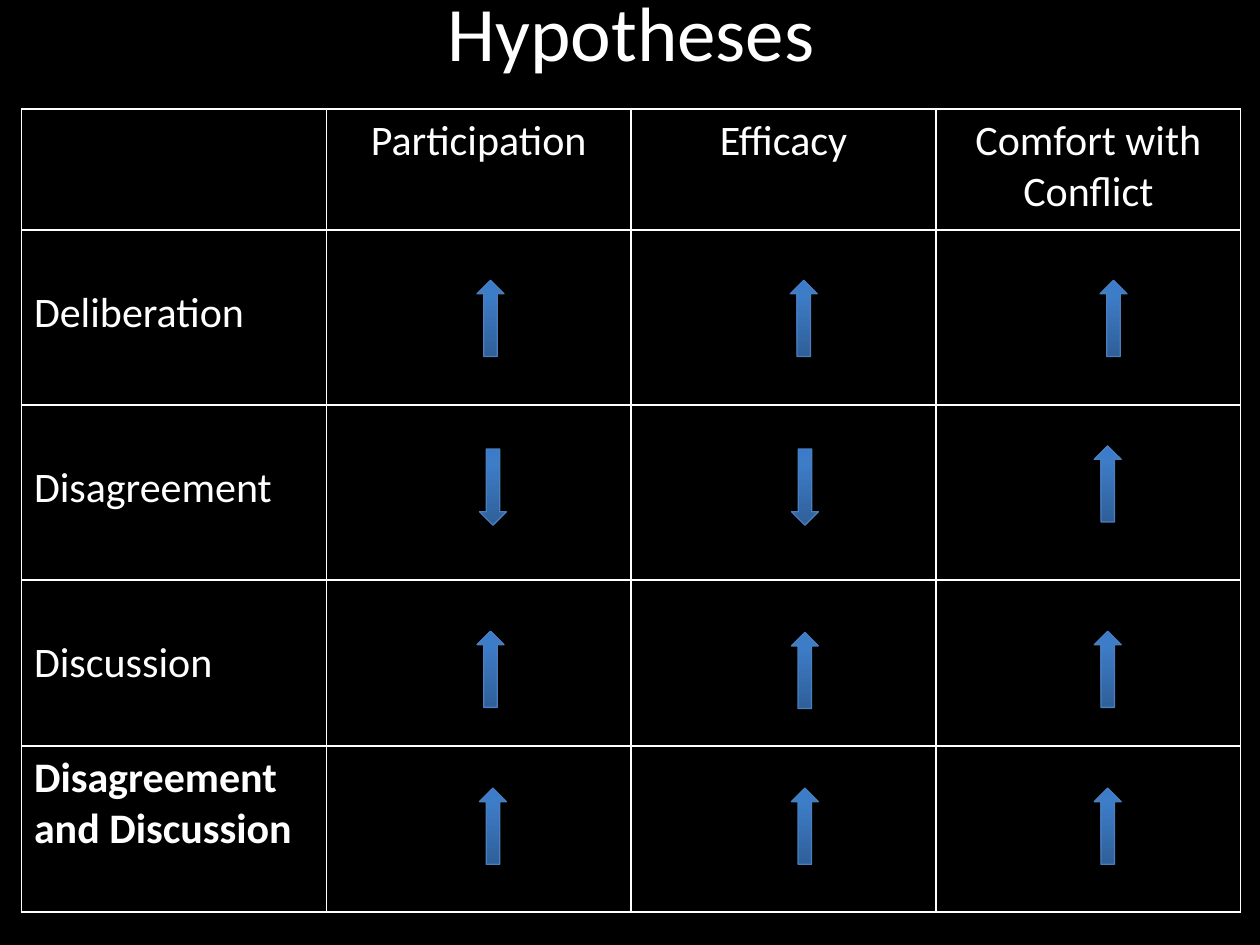
from copy import deepcopy
from typing import NamedTuple

from pptx import Presentation
from pptx import util as u
from pptx.dml.color import RGBColor
from pptx.enum import shapes, text
from pptx.oxml import parse_xml
from pptx.oxml.ns import nsdecls, qn

Pt = u.Pt

BLACK = RGBColor(0x00, 0x00, 0x00)
WHITE = RGBColor(0xFF, 0xFF, 0xFF)
ARROW_LINE = RGBColor(0x4B, 0x7E, 0xBC)
GRADIENT = (  # position in percent, colour; bottom to top
    (0, RGBColor(0x2F, 0x5F, 0x99)),
    (80, RGBColor(0x3D, 0x7C, 0xC7)),
    (100, RGBColor(0x3A, 0x7C, 0xCB)),
)

TABLE_LEFT, TABLE_TOP = 12.24, 62.4
COLUMN_WIDTH = 174.2
ROW_HEIGHTS = (69.1, 100, 100, 94.9, 94.9)
CELL_TOP = 3.6
ONE_LINE = 29.3
ARROW_WIDTH, ARROW_HEIGHT = 15.4, 43.5

UP = shapes.MSO_SHAPE.UP_ARROW
DOWN = shapes.MSO_SHAPE.DOWN_ARROW


class Arrow(NamedTuple):
    left: float
    top: float
    kind: shapes.MSO_SHAPE = UP


class Hypothesis(NamedTuple):
    label: str
    arrows: tuple[Arrow, ...]
    bold: bool = False
    lines_above: int = 1


HEADINGS = ("", "Participation", "Efficacy", "Comfort with Conflict")
HYPOTHESES = (
    Hypothesis("Deliberation", (Arrow(272.6, 160.2), Arrow(451.6, 160.2), Arrow(628.6, 160.2))),
    Hypothesis("Disagreement", (Arrow(274, 256.6, DOWN), Arrow(452.3, 256.6, DOWN), Arrow(625.3, 254.8))),
    Hypothesis("Discussion", (Arrow(272.6, 360.7), Arrow(452.2, 361.4), Arrow(625.3, 360.7))),
    Hypothesis("Disagreement and Discussion", (Arrow(274, 450.4), Arrow(452.2, 450.4), Arrow(625.3, 450.4)),
               bold=True, lines_above=0),
)


def write(frame, content: str, *, size: float = 24, bold: bool = False,
          align=text.PP_ALIGN.LEFT) -> None:
    """Put one formatted paragraph in a text frame."""
    frame.word_wrap = True
    para = frame.paragraphs[0]
    para.alignment = align
    span = para.add_run()
    span.text = content
    span.font.name = "Calibri"
    span.font.size = Pt(size)
    span.font.bold = bold
    span.font.color.rgb = WHITE


def style_cell(cell) -> None:
    """Black fill and a thin white border on all four sides."""
    cell.fill.solid()
    cell.fill.fore_color.rgb = BLACK
    properties = cell._tc.get_or_add_tcPr()
    for index, side in enumerate(("lnL", "lnR", "lnT", "lnB")):
        properties.insert(index, parse_xml(
            f'<a:{side} {nsdecls("a")} w="{Pt(1)}"><a:solidFill>'
            f'<a:srgbClr val="{WHITE}"/></a:solidFill></a:{side}>'))


def draw_table(page) -> None:
    frame = page.shapes.add_table(
        len(ROW_HEIGHTS), len(HEADINGS), Pt(TABLE_LEFT), Pt(TABLE_TOP),
        Pt(COLUMN_WIDTH * len(HEADINGS)), Pt(sum(ROW_HEIGHTS)))
    table = frame.table
    table.first_row = table.horz_banding = False
    for column in table.columns:
        column.width = Pt(COLUMN_WIDTH)
    for row, height in zip(table.rows, ROW_HEIGHTS):
        row.height = Pt(height)
    for cell in table.iter_cells():
        style_cell(cell)
    for index, heading in enumerate(HEADINGS):
        if heading:
            write(table.cell(0, index).text_frame, heading, align=text.PP_ALIGN.CENTER)
    for index, hypothesis in enumerate(HYPOTHESES, start=1):
        cell = table.cell(index, 0)
        cell.margin_top = Pt(CELL_TOP + ONE_LINE * hypothesis.lines_above)
        write(cell.text_frame, hypothesis.label, bold=hypothesis.bold)


def draw_arrow(page, arrow: Arrow) -> None:
    shape = page.shapes.add_shape(
        arrow.kind, Pt(arrow.left), Pt(arrow.top), Pt(ARROW_WIDTH), Pt(ARROW_HEIGHT))
    shape.shadow.inherit = False
    shape.line.color.rgb = ARROW_LINE
    shape.line.width = Pt(0.75)
    shape.fill.gradient()
    shape.fill.gradient_angle = 90
    # The default gradient has two stops; add the third
    stop_list = next(shape._element.spPr.iter(qn("a:gsLst")))
    stop_list.append(deepcopy(stop_list[-1]))
    for stop, (position, colour) in zip(shape.fill.gradient_stops, GRADIENT):
        stop.position = position / 100
        stop.color.rgb = colour


def main() -> None:
    deck = Presentation()
    deck.slide_width, deck.slide_height = Pt(720), Pt(540)
    page = deck.slides.add_slide(deck.slide_layouts[6])
    page.background.fill.solid()
    page.background.fill.fore_color.rgb = BLACK

    # Title
    box = page.shapes.add_textbox(Pt(36.7), Pt(-27.4), Pt(648), Pt(90))
    box.text_frame.vertical_anchor = text.MSO_ANCHOR.MIDDLE
    write(box.text_frame, "Hypotheses", size=44, align=text.PP_ALIGN.CENTER)

    # Table and the expected directions
    draw_table(page)
    for hypothesis in HYPOTHESES:
        for arrow in hypothesis.arrows:
            draw_arrow(page, arrow)

    deck.save("out.pptx")


if __name__ == "__main__":
    main()
